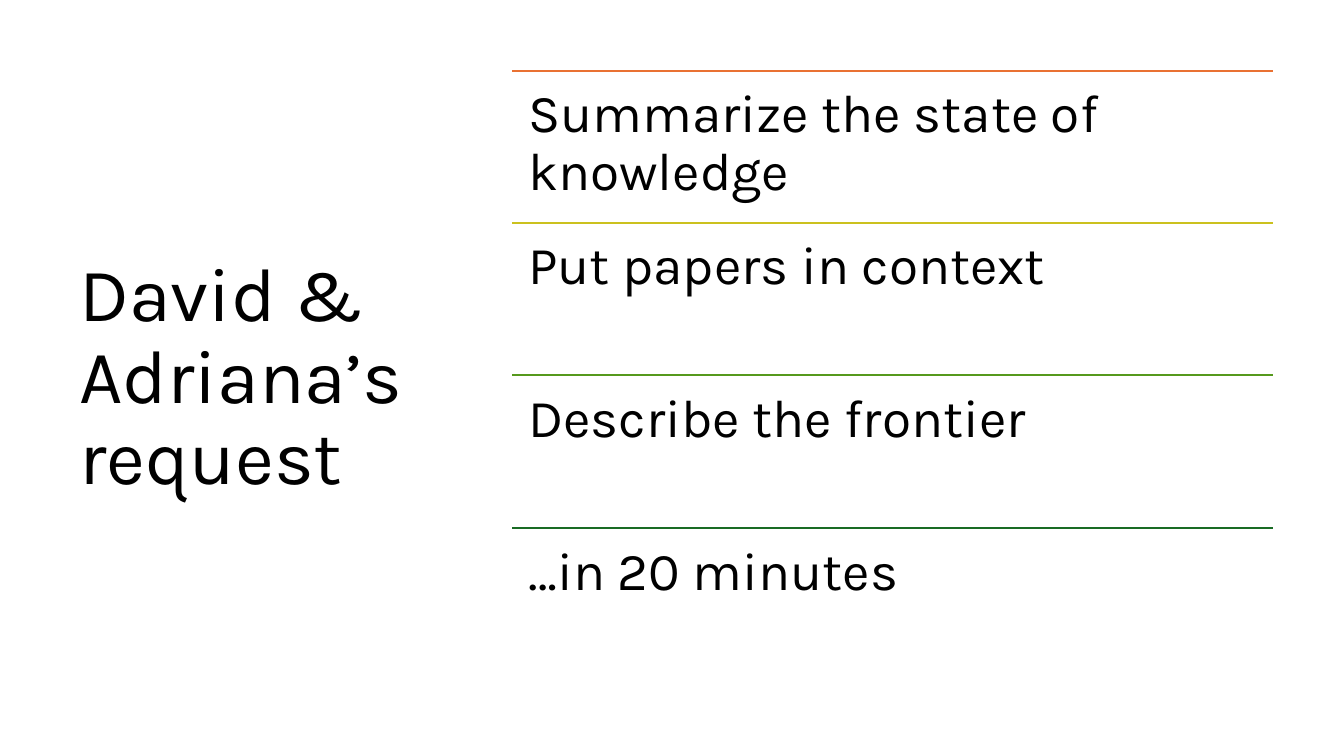
"""Build a slide with a title on the left and a ruled list of requests on the right."""
from dataclasses import dataclass

from lxml.etree import SubElement
from pptx import Presentation
from pptx.dml.color import RGBColor as Rgb
from pptx.enum.shapes import MSO_CONNECTOR as Connector
from pptx.enum.text import MSO_ANCHOR as Anchor
from pptx.oxml.ns import qn
from pptx.slide import Slide
from pptx.util import Emu, Pt

EMU_PER_PX = 9144


@dataclass(frozen=True)
class Theme:
    font: str = "Karla"
    ink: str = "000000"
    title_size: int = 54
    item_size: int = 38
    line_spacing: float = 0.9
    rule_width: float = 1.5


@dataclass(frozen=True)
class Area:
    left: int
    top: int
    width: int
    height: int


@dataclass(frozen=True)
class Request:
    wording: str
    rule_color: str


THEME = Theme()
PAGE = Area(0, 0, 1333, 750)
TITLE = Area(69, 70, 374, 611)
REQUEST_LIST = Area(508, 70, 755, 605)
REQUESTS = (
    Request("Summarize the state of knowledge", "E97132"),
    Request("Put papers in context", "CBC11E"),
    Request("Describe the frontier", "56991D"),
    Request("…in 20 minutes", "196B24"),
)


def px(length: int) -> Emu:
    return Emu(length * EMU_PER_PX)


def add_text(page: Slide, area: Area, wording: str, size: int, anchor: Anchor,
             side_inset: int, end_inset: int) -> None:
    box = page.shapes.add_textbox(px(area.left), px(area.top), px(area.width), px(area.height))
    frame = box.text_frame
    frame.word_wrap = True
    frame.vertical_anchor = anchor
    frame.margin_left = frame.margin_right = px(side_inset)
    frame.margin_top = frame.margin_bottom = px(end_inset)
    para = frame.paragraphs[0]
    para.line_spacing = THEME.line_spacing
    span = para.add_run()
    span.text = wording
    span.font.name = THEME.font
    span.font.size = Pt(size)
    span.font.color.rgb = Rgb.from_string(THEME.ink)


def add_rule(page: Slide, area: Area, color: str) -> None:
    rule = page.shapes.add_connector(
        Connector.STRAIGHT, px(area.left), px(area.top), px(area.left + area.width), px(area.top))
    rule.line.color.rgb = Rgb.from_string(color)
    rule.line.width = Pt(THEME.rule_width)
    SubElement(rule.element.spPr, qn("a:effectLst"))


def add_requests(page: Slide) -> None:
    pitch = REQUEST_LIST.height / len(REQUESTS)
    for index, request in enumerate(REQUESTS):
        row = Area(REQUEST_LIST.left, REQUEST_LIST.top + round(index * pitch),
                   REQUEST_LIST.width, round(pitch))
        add_rule(page, row, request.rule_color)
        add_text(page, row, request.wording, THEME.item_size, Anchor.TOP, 16, 16)


def main() -> None:
    deck = Presentation()
    deck.slide_width, deck.slide_height = px(PAGE.width), px(PAGE.height)
    page = deck.slides.add_slide(deck.slide_layouts[6])
    add_text(page, TITLE, "David & Adriana’s request", THEME.title_size, Anchor.MIDDLE, 10, 5)
    add_requests(page)
    deck.save("out.pptx")


if __name__ == "__main__":
    main()
